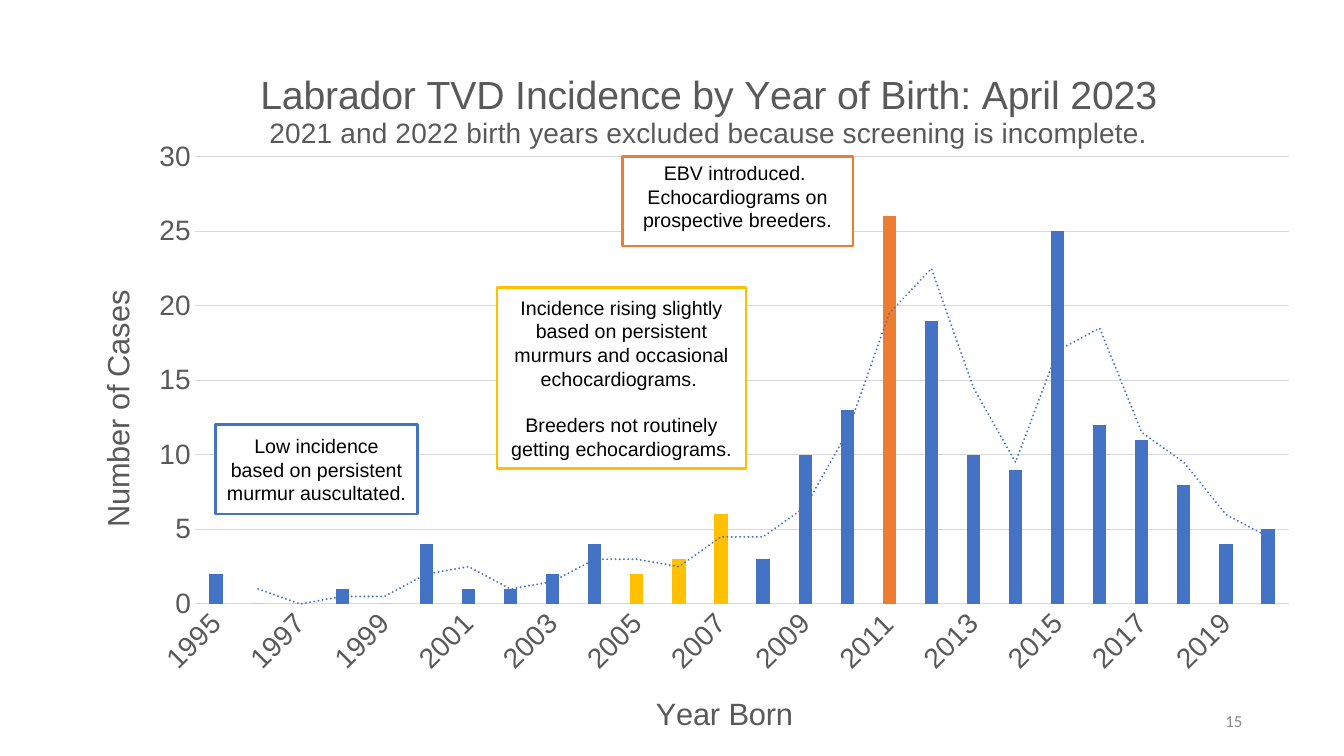
from pptx import Presentation
from pptx.chart.data import CategoryChartData
from pptx.dml.color import RGBColor
from pptx.enum.chart import XL_CHART_TYPE, XL_TICK_MARK
from pptx.enum.shapes import MSO_SHAPE
from pptx.enum.text import MSO_ANCHOR, PP_ALIGN
from pptx.oxml import parse_xml
from pptx.oxml.ns import nsdecls, qn
from pptx.util import Inches, Pt

BLUE, YELLOW, ORANGE = "4472C4", "FFC000", "ED7D31"
GREY, GRID = "595959", "D9D9D9"
rgb = RGBColor.from_string


def place(element, index, **percents):
    """Pin a chart part at percentages (x, y, w, h) of the chart's size."""
    old = element.find(qn("c:layout"))
    if old is not None:
        element.remove(old)
    target = '<c:layoutTarget val="inner"/>' if "w" in percents else ""
    modes = "".join(f'<c:{k}Mode val="edge"/>' for k in percents if k in "xy")
    values = "".join(f'<c:{k} val="{v / 100:.4f}"/>' for k, v in percents.items())
    element.insert(index, parse_xml(
        f'<c:layout {nsdecls("c")}><c:manualLayout>{target}{modes}{values}'
        '</c:manualLayout></c:layout>'))


def write_title(title, lines, x, y):
    """Fill a chart or axis title with (text, size) lines and pin it."""
    frame = title.text_frame
    frame.text = "\n".join(text for text, _ in lines)
    for paragraph, (_, size) in zip(frame.paragraphs, lines):
        font = paragraph.runs[0].font
        font.name, font.size, font.bold = "Arial", Pt(size), False
        font.color.rgb = rgb(GREY)
    place(title._element, 1, x=x, y=y)


prs = Presentation()
prs.slide_width, prs.slide_height = Inches(13.33), Inches(7.5)
slide = prs.slides.add_slide(prs.slide_layouts[6])

# Cases per birth year
first_year = 1995
cases = [2, 0, 0, 1, 0, 4, 1, 1, 2, 4, 2, 3, 6, 3, 10, 13, 26, 19, 10, 9,
         25, 12, 11, 8, 4, 5]
highlights = {2005: YELLOW, 2006: YELLOW, 2007: YELLOW, 2011: ORANGE}

incidence = CategoryChartData()
incidence.categories = [str(first_year + i) for i in range(len(cases))]
incidence.add_series("Series 1", cases)
chart = slide.shapes.add_chart(
    XL_CHART_TYPE.COLUMN_CLUSTERED, Inches(0.92), Inches(0.5),
    Inches(12.22), Inches(6.9), incidence).chart
chart.has_legend = False
chart.font.name, chart.font.size = "Arial", Pt(20)
chart.font.color.rgb = rgb(GREY)
place(chart._chartSpace.chart.plotArea, 0, x=8.3, y=15.3, w=88.8, h=64.3)

columns = chart.plots[0]
columns.gap_width, columns.overlap = 219, -27
columns.vary_by_categories = False
series = columns.series[0]
series.format.fill.solid()
series.format.fill.fore_color.rgb = rgb(BLUE)
for year, color in highlights.items():
    fill = series.points[year - first_year].format.fill
    fill.solid()
    fill.fore_color.rgb = rgb(color)

# Two-year moving average
series._element.find(qn("c:cat")).addprevious(parse_xml(
    f'<c:trendline {nsdecls("c", "a")}><c:spPr><a:ln w="{Pt(1.5)}" cap="rnd">'
    f'<a:solidFill><a:srgbClr val="{BLUE}"/></a:solidFill>'
    '<a:prstDash val="sysDot"/></a:ln></c:spPr>'
    '<c:trendlineType val="movingAvg"/><c:period val="2"/>'
    '<c:dispRSqr val="0"/><c:dispEq val="0"/></c:trendline>'))

# Axes and titles
years, counts = chart.category_axis, chart.value_axis
for axis in (years, counts):
    axis.major_tick_mark = axis.minor_tick_mark = XL_TICK_MARK.NONE
    axis.tick_labels.font.name = "Arial"
    axis.tick_labels.font.size = Pt(20)
    axis.tick_labels.font.color.rgb = rgb(GREY)
years._element.find(qn("c:txPr")).find(qn("a:bodyPr")).set("rot", "-2700000")
counts.minimum_scale, counts.maximum_scale, counts.major_unit = 0, 30, 5
counts.format.line.fill.background()
for line in (years.format.line, counts.major_gridlines.format.line):
    line.color.rgb = rgb(GRID)
    line.width = Pt(0.75)

write_title(chart.chart_title, [
    ("Labrador TVD Incidence by Year of Birth: April 2023", 28),
    ("2021 and 2022 birth years excluded because screening is incomplete.", 20),
], 13.35, 2.8)
write_title(years.axis_title, [("Year Born", 22)], 45.25, 91.85)
write_title(counts.axis_title, [("Number of Cases", 22)], 0, 33.75)
counts_body = counts.axis_title.text_frame._txBody.bodyPr
counts_body.set("rot", "-5400000")
counts_body.set("vert", "horz")

# Notes on the three periods
periods = [
    (2.14, 4.21, 2, 0.89, BLUE, MSO_ANCHOR.MIDDLE, 0,
     "Low incidence based on persistent murmur auscultated."),
    (4.93, 2.85, 2.47, 1.8, YELLOW, MSO_ANCHOR.MIDDLE, 16.5,
     "Incidence rising slightly based on persistent murmurs and occasional "
     "echocardiograms. \nBreeders not routinely getting echocardiograms."),
    (6.17, 1.55, 2.29, 0.89, ORANGE, MSO_ANCHOR.TOP, 0,
     "EBV introduced. \nEchocardiograms on prospective breeders."),
]
for left, top, width, height, color, anchor, gap, text in periods:
    note = slide.shapes.add_shape(
        MSO_SHAPE.RECTANGLE, Inches(left), Inches(top), Inches(width), Inches(height))
    note.shadow.inherit = False
    note.fill.solid()
    note.fill.fore_color.rgb = rgb("FFFFFF")
    note.line.color.rgb = rgb(color)
    note.line.width = Pt(2)
    frame = note.text_frame
    frame.word_wrap, frame.vertical_anchor = True, anchor
    frame.text = text
    for i, paragraph in enumerate(frame.paragraphs):
        paragraph.alignment = PP_ALIGN.CENTER
        paragraph.space_before = Pt(gap if i else 0)
        paragraph.font.name, paragraph.font.size = "Arial", Pt(14)
        paragraph.font.color.rgb = rgb("000000")

page = slide.shapes.add_textbox(
    Inches(9.42), Inches(6.95), Inches(3), Inches(0.4)).text_frame
page.word_wrap, page.vertical_anchor = True, MSO_ANCHOR.MIDDLE
page.text = "15"
number = page.paragraphs[0]
number.alignment = PP_ALIGN.RIGHT
number.font.name, number.font.size = "Calibri", Pt(12)
number.font.color.rgb = rgb("888888")

prs.save("out.pptx")
